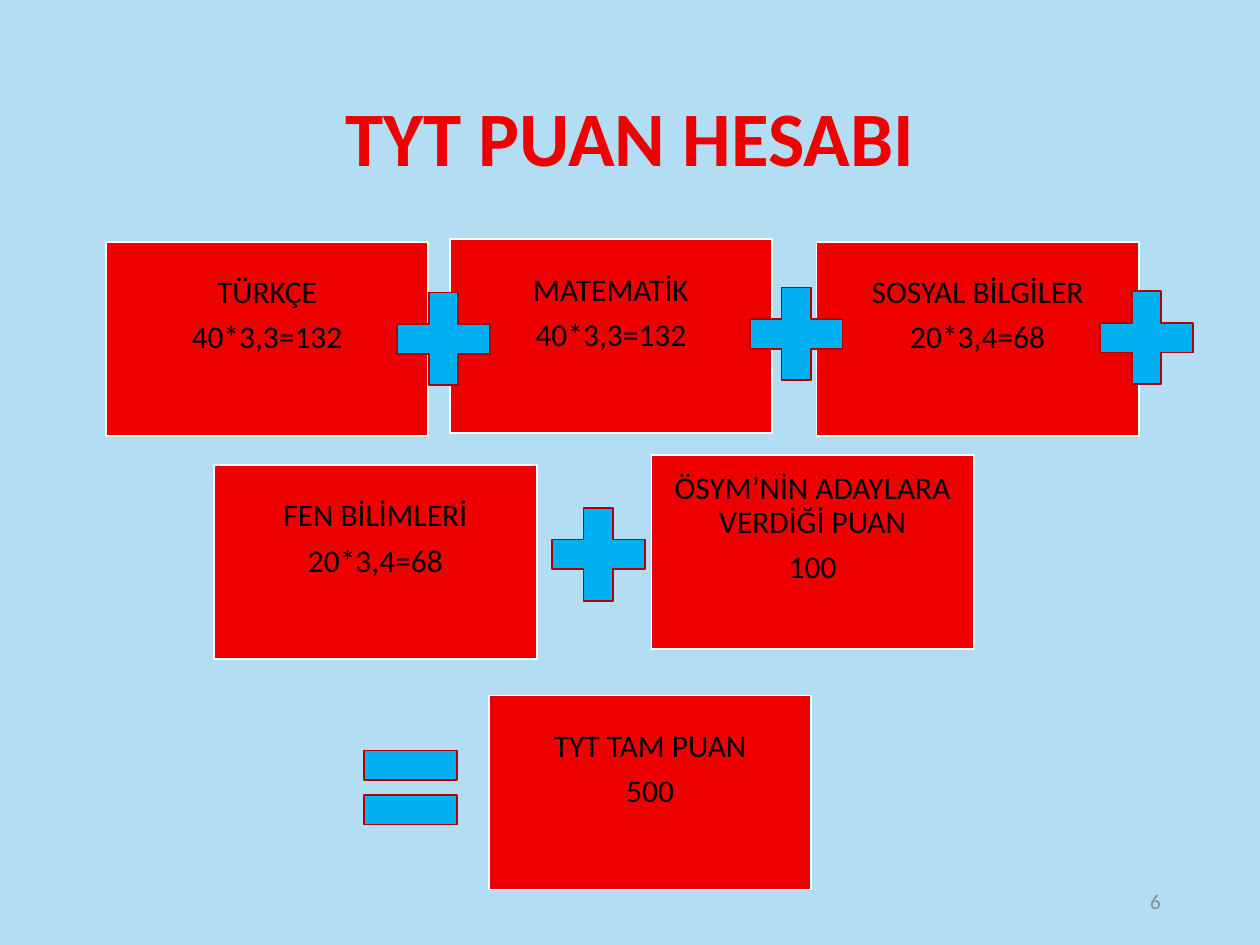
from dataclasses import dataclass

import pptx
import pptx.dml.color
import pptx.enum.shapes
import pptx.enum.text
import pptx.util
from pptx.dml.color import RGBColor
from pptx.enum.shapes import MSO_SHAPE
from pptx.enum.text import MSO_ANCHOR, PP_ALIGN
from pptx.util import Inches

SKY = RGBColor(0xB3, 0xDD, 0xF2)
RED = RGBColor(0xEF, 0x00, 0x00)
DARK_RED = RGBColor(0xB1, 0x00, 0x00)
BLUE = RGBColor(0x00, 0xB0, 0xF0)
WHITE = RGBColor(0xFF, 0xFF, 0xFF)
BLACK = RGBColor(0x00, 0x00, 0x00)
GRAY = RGBColor(0x8C, 0x8C, 0x8C)
FONT = "Calibri"
CARD_WIDTH, CARD_HEIGHT = 2.56, 1.54
CARD_INSET, CARD_BOTTOM_INSET = 0.07, 0.43
SIGN_SIZE = 1


@dataclass(frozen=True)
class ScoreCard:
    left: float
    top: float
    subject: str
    score: str


@dataclass(frozen=True)
class Sign:
    left: float
    top: float
    kind: MSO_SHAPE = MSO_SHAPE.MATH_PLUS


CARDS = [
    ScoreCard(0.84, 1.92, "TÜRKÇE", "40*3,3=132"),
    ScoreCard(3.57, 1.9, "MATEMATİK", "40*3,3=132"),
    ScoreCard(6.48, 1.92, "SOSYAL BİLGİLER", "20*3,4=68"),
    ScoreCard(1.7, 3.69, "FEN BİLİMLERİ", "20*3,4=68"),
    ScoreCard(5.17, 3.61, "ÖSYM’NİN ADAYLARA VERDİĞİ PUAN", "100"),
    ScoreCard(3.88, 5.52, "TYT TAM PUAN", "500"),
]
SIGNS = [
    Sign(3.02, 2.19),
    Sign(5.82, 2.15),
    Sign(8.6, 2.18),
    Sign(4.25, 3.9),
    Sign(2.76, 5.75, MSO_SHAPE.MATH_EQUAL),
]


def add_run(paragraph, text: str, size: float, color: RGBColor,
            alignment: PP_ALIGN, bold: bool = False) -> None:
    paragraph.alignment = alignment
    run = paragraph.add_run()
    run.text = text
    run.font.name = FONT
    run.font.size = pptx.util.Pt(size)
    run.font.bold = bold
    run.font.color.rgb = color


def add_box(slide, kind: MSO_SHAPE, left: float, top: float, width: float,
            height: float, fill: RGBColor, line: RGBColor):
    shape = slide.shapes.add_shape(
        kind, Inches(left), Inches(top), Inches(width), Inches(height))
    shape.shadow.inherit = False
    shape.fill.solid()
    shape.fill.fore_color.rgb = fill
    shape.line.color.rgb = line
    shape.line.width = pptx.util.Pt(1)
    return shape


def draw_card(slide, card: ScoreCard) -> None:
    shape = add_box(slide, MSO_SHAPE.RECTANGLE, card.left, card.top,
                    CARD_WIDTH, CARD_HEIGHT, RED, WHITE)
    frame = shape.text_frame
    frame.word_wrap = True
    frame.vertical_anchor = MSO_ANCHOR.MIDDLE
    frame.margin_left = frame.margin_right = frame.margin_top = Inches(CARD_INSET)
    frame.margin_bottom = Inches(CARD_BOTTOM_INSET)
    subject, score = frame.paragraphs[0], frame.add_paragraph()
    for paragraph, text in ((subject, card.subject), (score, card.score)):
        paragraph.line_spacing = 0.9
        add_run(paragraph, text, 18, BLACK, PP_ALIGN.CENTER)
    subject.space_after = pptx.util.Pt(6.3)


def draw_sign(slide, sign: Sign) -> None:
    add_box(slide, sign.kind, sign.left, sign.top, SIGN_SIZE, SIGN_SIZE,
            BLUE, DARK_RED)


def draw_title(slide, text: str) -> None:
    title = slide.shapes.title
    title.left, title.top = Inches(0.69), Inches(0.4)
    title.width, title.height = Inches(8.62), Inches(1.45)
    title.text_frame.vertical_anchor = MSO_ANCHOR.MIDDLE
    paragraph = title.text_frame.paragraphs[0]
    paragraph.line_spacing = 0.9
    add_run(paragraph, text, 44, RED, PP_ALIGN.CENTER, bold=True)


def draw_page_number(slide, number: str) -> None:
    box = slide.shapes.add_textbox(
        Inches(7.06), Inches(6.95), Inches(2.25), Inches(0.4))
    box.text_frame.word_wrap = True
    box.text_frame.vertical_anchor = MSO_ANCHOR.MIDDLE
    add_run(box.text_frame.paragraphs[0], number, 12, GRAY, PP_ALIGN.RIGHT)


def main() -> None:
    presentation = pptx.Presentation()
    presentation.slide_width = Inches(10)
    presentation.slide_height = Inches(7.5)
    slide = presentation.slides.add_slide(presentation.slide_layouts[5])
    slide.background.fill.solid()
    slide.background.fill.fore_color.rgb = SKY
    draw_title(slide, "TYT PUAN HESABI")
    draw_page_number(slide, "6")
    for card in CARDS:
        draw_card(slide, card)
    for sign in SIGNS:
        draw_sign(slide, sign)
    presentation.save("out.pptx")


if __name__ == "__main__":
    main()
